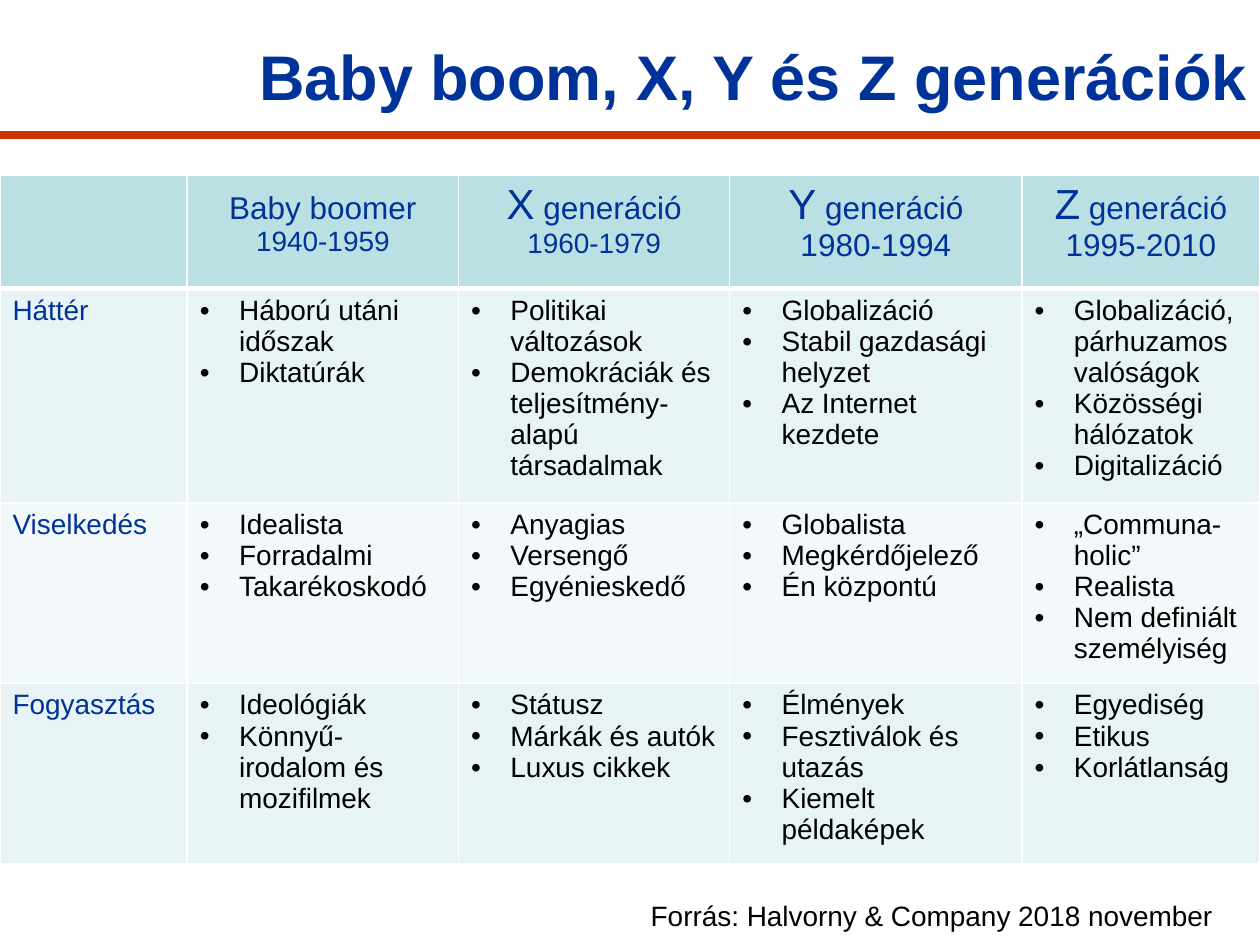
from dataclasses import dataclass

from lxml import etree
from pptx import Presentation
from pptx.dml.color import RGBColor
from pptx.enum.shapes import MSO_CONNECTOR
from pptx.enum.text import MSO_ANCHOR, PP_ALIGN
from pptx.oxml.ns import qn
from pptx.util import Pt

STRAIGHT = MSO_CONNECTOR.STRAIGHT
MIDDLE, TOP = MSO_ANCHOR.MIDDLE, MSO_ANCHOR.TOP
CENTER, RIGHT = PP_ALIGN.CENTER, PP_ALIGN.RIGHT

FONT = "Arial"
COLORS = {
    "blue": "003399",
    "black": "000000",
    "white": "FFFFFF",
    "rule": "CC3300",
    "header": "BBE0E3",
    "band_dark": "E7F3F4",
    "band_light": "F3F9FA",
}
BODY_SIZE = 16
BULLET_INDENT = 22.5
COLUMN_WIDTHS = (107, 155, 155, 167, 136)
ROW_HEIGHTS = (65, 113.5, 96, 96)


@dataclass
class Generation:
    letter: str
    name: str
    years: str
    years_size: float
    margin_top: float = 3.6


@dataclass
class Aspect:
    name: str
    fill: str
    points: tuple


@dataclass
class Label:
    text: str
    left: float
    top: float
    width: float
    height: float
    size: float
    color: str
    bold: bool = False
    anchor: MSO_ANCHOR = TOP


GENERATIONS = (
    Generation("", "Baby boomer", "1940-1959", 16, margin_top=9.2),
    Generation("X", " generáció", "1960-1979", 16),
    Generation("Y", " generáció", "1980-1994", 18),
    Generation("Z", " generáció", "1995-2010", 18),
)

ASPECTS = (
    Aspect("Háttér", "band_dark", (
        ("Háború utáni időszak", "Diktatúrák"),
        ("Politikai változások", "Demokráciák és teljesítmény-alapú társadalmak"),
        ("Globalizáció", "Stabil gazdasági helyzet", "Az Internet kezdete"),
        ("Globalizáció, párhuzamos valóságok", "Közösségi hálózatok", "Digitalizáció"),
    )),
    Aspect("Viselkedés", "band_light", (
        ("Idealista", "Forradalmi", "Takarékoskodó"),
        ("Anyagias", "Versengő", "Egyénieskedő"),
        ("Globalista", "Megkérdőjelező", "Én központú"),
        ("„Communa-holic”", "Realista", "Nem definiált személyiség"),
    )),
    Aspect("Fogyasztás", "band_dark", (
        ("Ideológiák", "Könnyű-irodalom és mozifilmek"),
        ("Státusz", "Márkák és autók", "Luxus cikkek"),
        ("Élmények", "Fesztiválok és utazás", "Kiemelt példaképek"),
        ("Egyediség", "Etikus", "Korlátlanság"),
    )),
)

TITLE = Label("Baby boom, X, Y és Z generációk", 72, 9.5, 648, 67,
              36, "blue", bold=True, anchor=MIDDLE)
SOURCE = Label("Forrás: Halvorny & Company 2018 november", 314.5, 510, 385.5, 26.5,
               BODY_SIZE, "black")


def rgb(color: str) -> RGBColor:
    return RGBColor.from_string(COLORS[color])


def format_run(r, size: float, color: str, bold: bool = False) -> None:
    r.font.name = FONT
    r.font.size = Pt(size)
    r.font.bold = bold
    r.font.color.rgb = rgb(color)


def add_run(p, text: str, size: float, color: str) -> None:
    r = p.add_run()
    r.text = text
    format_run(r, size, color)


def add_label(s, label: Label) -> None:
    box = s.shapes.add_textbox(Pt(label.left), Pt(label.top),
                               Pt(label.width), Pt(label.height))
    tf = box.text_frame
    tf.word_wrap = True
    tf.vertical_anchor = label.anchor
    tf.text = label.text
    p = tf.paragraphs[0]
    p.alignment = RIGHT
    format_run(p.runs[0], label.size, label.color, label.bold)


def add_rule(s, y: float, width: float) -> None:
    line = s.shapes.add_connector(STRAIGHT, Pt(0), Pt(y), Pt(width), Pt(y))
    line.line.color.rgb = rgb("rule")
    line.line.width = Pt(4.5)
    etree.SubElement(line._element.spPr, qn("a:effectLst"))


def style_cell(cell, fill: str, top_width: float, bottom_width: float) -> None:
    """Give the cell white borders and a solid fill."""
    tc_pr = cell._tc.get_or_add_tcPr()
    borders = {"a:lnL": 1, "a:lnR": 1, "a:lnT": top_width, "a:lnB": bottom_width}
    for tag, width in borders.items():
        ln = etree.SubElement(tc_pr, qn(tag), w=str(Pt(width)))
        solid = etree.SubElement(ln, qn("a:solidFill"))
        etree.SubElement(solid, qn("a:srgbClr"), val=COLORS["white"])
    cell.fill.solid()
    cell.fill.fore_color.rgb = rgb(fill)


def make_bullet(p) -> None:
    p_pr = p._p.get_or_add_pPr()
    p_pr.set("marL", str(Pt(BULLET_INDENT)))
    p_pr.set("indent", str(-Pt(BULLET_INDENT)))
    etree.SubElement(p_pr, qn("a:buFont"), typeface=FONT)
    etree.SubElement(p_pr, qn("a:buChar"), char="•")


def write_header(cell, generation: Generation) -> None:
    cell.margin_top = Pt(generation.margin_top)
    tf = cell.text_frame
    p = tf.paragraphs[0]
    p.alignment = CENTER
    if generation.letter:
        add_run(p, generation.letter, 24, "blue")
    add_run(p, generation.name, 18, "blue")
    p = tf.add_paragraph()
    p.alignment = CENTER
    add_run(p, generation.years, generation.years_size, "blue")


def write_bullets(cell, points: tuple) -> None:
    tf = cell.text_frame
    tf.text = "\n".join(points)
    for p in tf.paragraphs:
        make_bullet(p)
        format_run(p.runs[0], BODY_SIZE, "black")


def add_generation_table(s, top: float) -> None:
    frame = s.shapes.add_table(len(ROW_HEIGHTS), len(COLUMN_WIDTHS), Pt(0), Pt(top),
                               Pt(sum(COLUMN_WIDTHS)), Pt(sum(ROW_HEIGHTS)))
    table = frame.table
    table.first_row = table.horz_banding = False
    for column, width in zip(table.columns, COLUMN_WIDTHS):
        column.width = Pt(width)
    for row, height in zip(table.rows, ROW_HEIGHTS):
        row.height = Pt(height)

    fills = ["header"] + [aspect.fill for aspect in ASPECTS]
    for i, (row, fill) in enumerate(zip(table.rows, fills)):
        for cell in row.cells:
            style_cell(cell, fill, 3 if i == 1 else 1, 3 if i == 0 else 1)

    for j, generation in enumerate(GENERATIONS, start=1):
        write_header(table.cell(0, j), generation)
    for i, aspect in enumerate(ASPECTS, start=1):
        add_run(table.cell(i, 0).text_frame.paragraphs[0], aspect.name, BODY_SIZE, "blue")
        for j, points in enumerate(aspect.points, start=1):
            write_bullets(table.cell(i, j), points)


def main() -> None:
    prs = Presentation()
    prs.slide_width, prs.slide_height = Pt(720), Pt(540)
    s = prs.slides.add_slide(prs.slide_layouts[6])
    add_rule(s, 77, 720)
    add_label(s, TITLE)
    add_generation_table(s, 100)
    add_label(s, SOURCE)
    prs.save("out.pptx")


if __name__ == "__main__":
    main()
